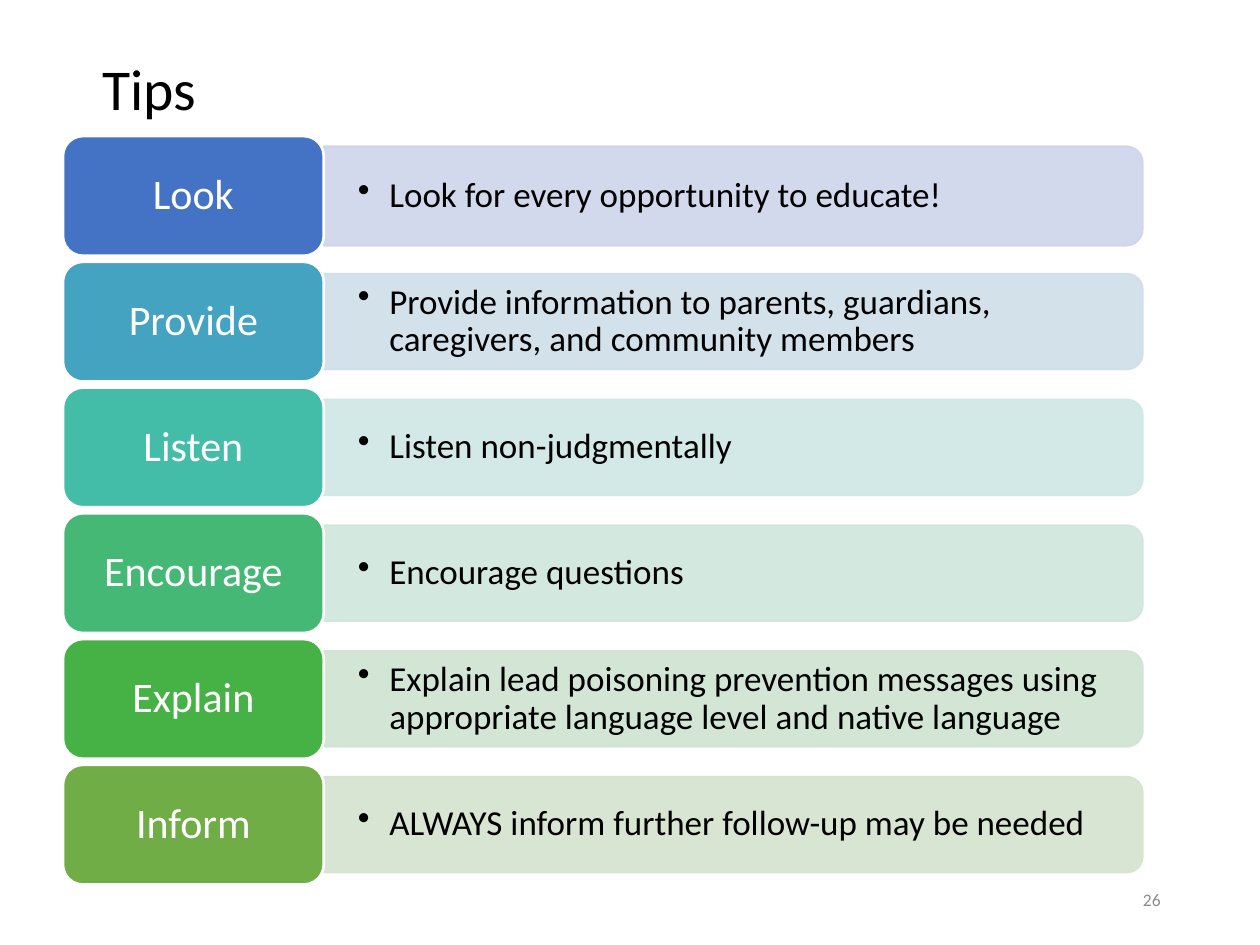
from lxml import etree
from pptx import Presentation
from pptx.dml.color import RGBColor
from pptx.enum import shapes, text
from pptx.oxml import ns
from pptx.util import Inches, Pt

FONT = "Calibri"
BLACK = RGBColor(0x00, 0x00, 0x00)
WHITE = RGBColor(0xFF, 0xFF, 0xFF)
GREY = RGBColor(0x8C, 0x8C, 0x8C)

# Label, advice, label colour, bar colour
TIPS = [
    ("Look", "Look for every opportunity to educate!",
     RGBColor(0x44, 0x72, 0xC4), RGBColor(0xCF, 0xD5, 0xEA)),
    ("Provide", "Provide information to parents, guardians, caregivers, and community members",
     RGBColor(0x44, 0xA3, 0xC0), RGBColor(0xCF, 0xDF, 0xE8)),
    ("Listen", "Listen non-judgmentally",
     RGBColor(0x43, 0xBD, 0xA7), RGBColor(0xCF, 0xE7, 0xE6)),
    ("Encourage", "Encourage questions",
     RGBColor(0x44, 0xB8, 0x74), RGBColor(0xCF, 0xE6, 0xDB)),
    ("Explain", "Explain lead poisoning prevention messages using "
     "appropriate language level and native language",
     RGBColor(0x46, 0xB2, 0x46), RGBColor(0xCF, 0xE4, 0xD2)),
    ("Inform", "ALWAYS inform further follow-up may be needed",
     RGBColor(0x70, 0xAD, 0x47), RGBColor(0xD5, 0xE3, 0xCF)),
]

FIRST_CENTRE, ROW_PITCH = 1.555, 0.998
LABEL_LEFT, LABEL_WIDTH, LABEL_HEIGHT = 0.5, 2.07, 0.95
BAR_LEFT, BAR_LENGTH = LABEL_LEFT + LABEL_WIDTH, 6.5
FIRST_BAR_HEIGHT, BAR_HEIGHT = 0.79, 0.76
ADVICE_HEIGHT = 0.7


def write(shape, words, size, color, align=text.PP_ALIGN.LEFT,
          margins=(0.1, 0.05), bullet=False):
    frame = shape.text_frame
    frame.word_wrap = True
    frame.auto_size = text.MSO_AUTO_SIZE.NONE
    frame.vertical_anchor = text.MSO_ANCHOR.MIDDLE
    frame.margin_left = frame.margin_right = Inches(margins[0])
    frame.margin_top = frame.margin_bottom = Inches(margins[1])
    para = frame.paragraphs[0]
    if bullet:
        add_bullet(para)
    para.alignment = align
    para.line_spacing = 0.9
    span = para.add_run()
    span.text = words
    span.font.name = FONT
    span.font.size = Pt(size)
    span.font.color.rgb = color


def add_bullet(para):
    para.level = 1
    properties = para._p.get_or_add_pPr()
    properties.set("marL", str(Inches(0.25)))
    properties.set("indent", str(Inches(-0.25)))
    etree.SubElement(properties, ns.qn("a:buChar")).set("char", "•")


def make_translucent(fill_parent):
    """Set 90% opacity on the solid colour below the given element."""
    color = fill_parent.find(ns.qn("a:solidFill"))[0]
    etree.SubElement(color, ns.qn("a:alpha")).set("val", "90000")


def add_block(page, kind, left, top, width, height, fill, line, line_width):
    block = page.shapes.add_shape(
        kind, Inches(left), Inches(top), Inches(width), Inches(height))
    block.shadow.inherit = False
    block.fill.solid()
    block.fill.fore_color.rgb = fill
    block.line.color.rgb = line
    block.line.width = Pt(line_width)
    return block


def add_text(page, left, top, width, height, words, size, color, **layout):
    box = page.shapes.add_textbox(
        Inches(left), Inches(top), Inches(width), Inches(height))
    write(box, words, size, color, **layout)


def add_bar(page, centre, height, color):
    """Turn an upright shape so that its two rounded corners face right."""
    bar = add_block(page, shapes.MSO_SHAPE.ROUND_2_SAME_RECTANGLE,
                    BAR_LEFT + (BAR_LENGTH - height) / 2, centre - BAR_LENGTH / 2,
                    height, BAR_LENGTH, color, color, 1)
    bar.rotation = 90
    properties = bar._element.spPr
    make_translucent(properties)
    make_translucent(properties.find(ns.qn("a:ln")))


def add_tip(page, row, label, advice, label_color, bar_color):
    centre = FIRST_CENTRE + row * ROW_PITCH
    add_bar(page, centre, BAR_HEIGHT if row else FIRST_BAR_HEIGHT, bar_color)
    add_text(page, BAR_LEFT, centre - ADVICE_HEIGHT / 2, BAR_LENGTH - 0.03,
             ADVICE_HEIGHT, advice, 20, BLACK, margins=(0.27, 0.14), bullet=True)
    tile = add_block(page, shapes.MSO_SHAPE.ROUNDED_RECTANGLE,
                     LABEL_LEFT, centre - LABEL_HEIGHT / 2,
                     LABEL_WIDTH, LABEL_HEIGHT, label_color, WHITE, 1.5)
    write(tile, label, 24, WHITE, align=text.PP_ALIGN.CENTER)


def add_title(page, words):
    title = page.shapes.title
    title.left, title.top = Inches(0.71), Inches(0)
    title.width, title.height = Inches(8.57), Inches(1.45)
    write(title, words, 33, BLACK)


def main():
    deck = Presentation()
    deck.slide_width, deck.slide_height = Inches(10), Inches(7.5)
    page = deck.slides.add_slide(deck.slide_layouts[5])
    add_title(page, "Tips")
    add_text(page, 7.06, 6.95, 2.25, 0.4, "26", 10, GREY,
             align=text.PP_ALIGN.RIGHT)
    for row, tip in enumerate(TIPS):
        add_tip(page, row, *tip)
    deck.save("out.pptx")


if __name__ == "__main__":
    main()
